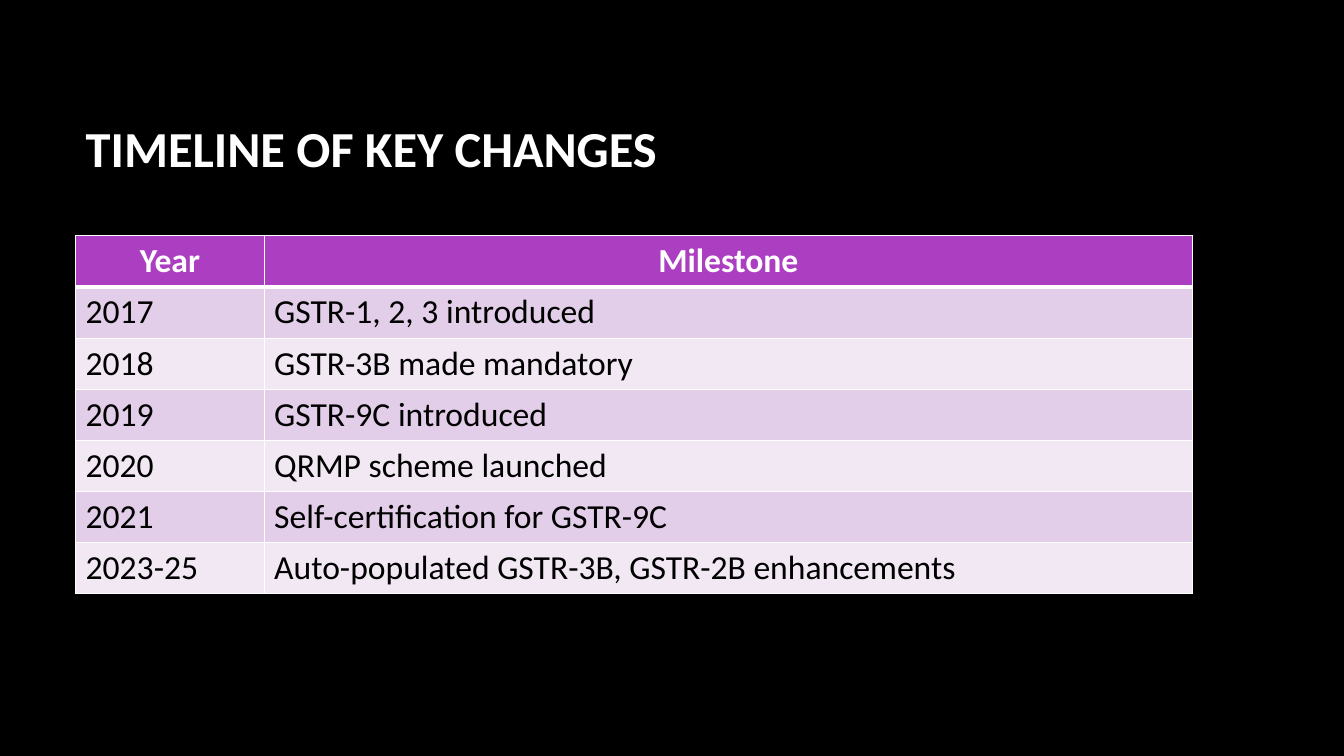
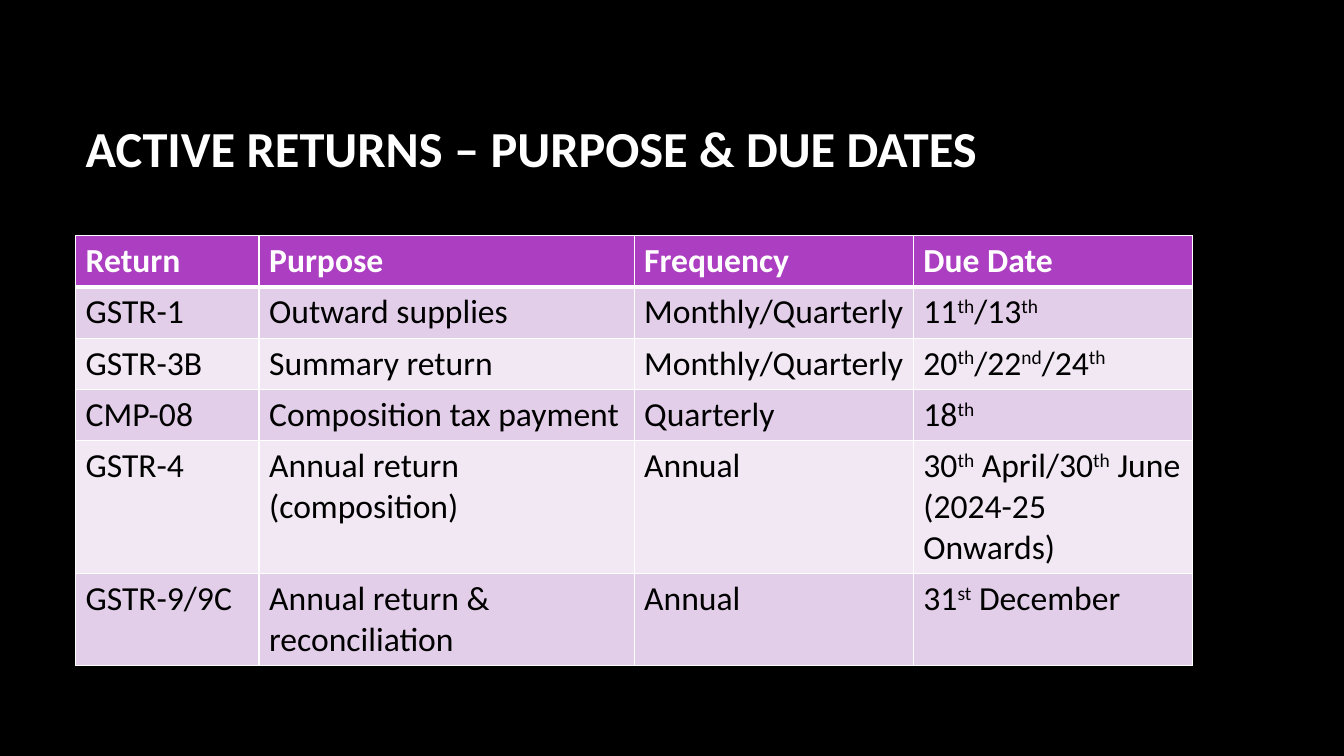
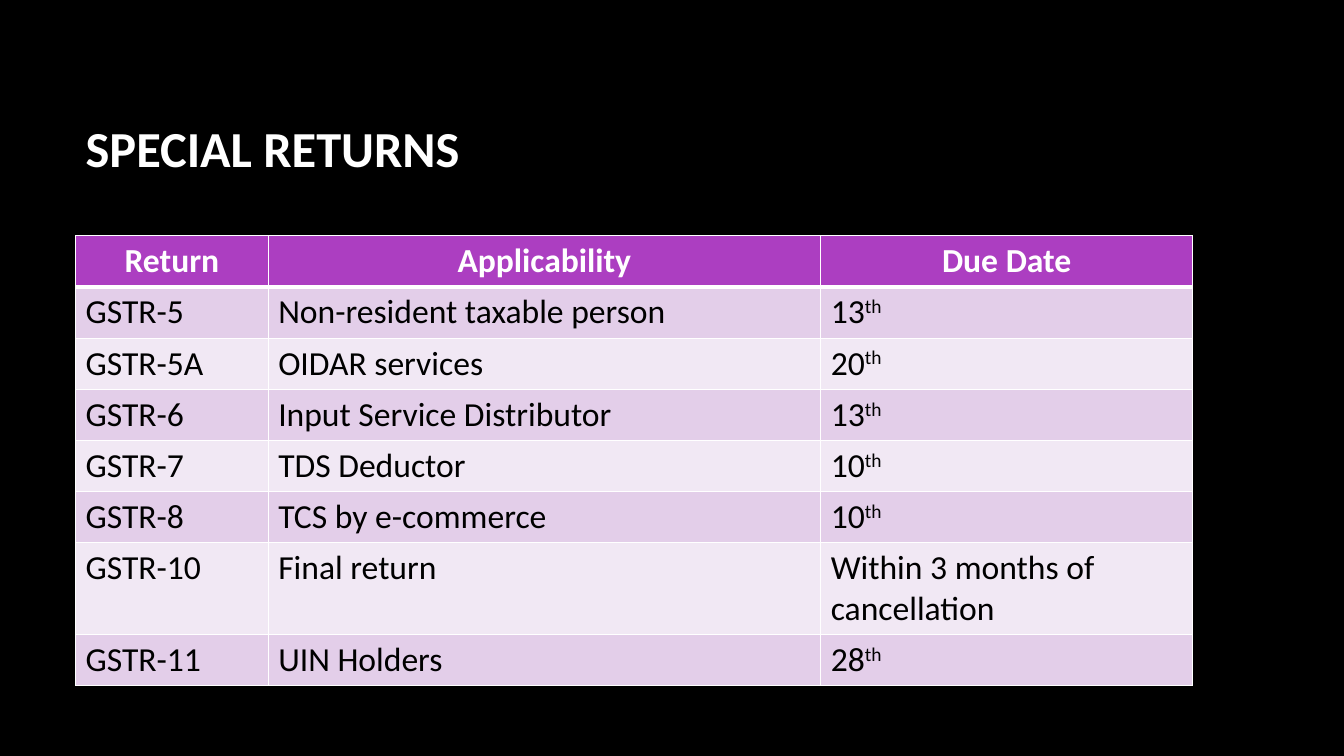
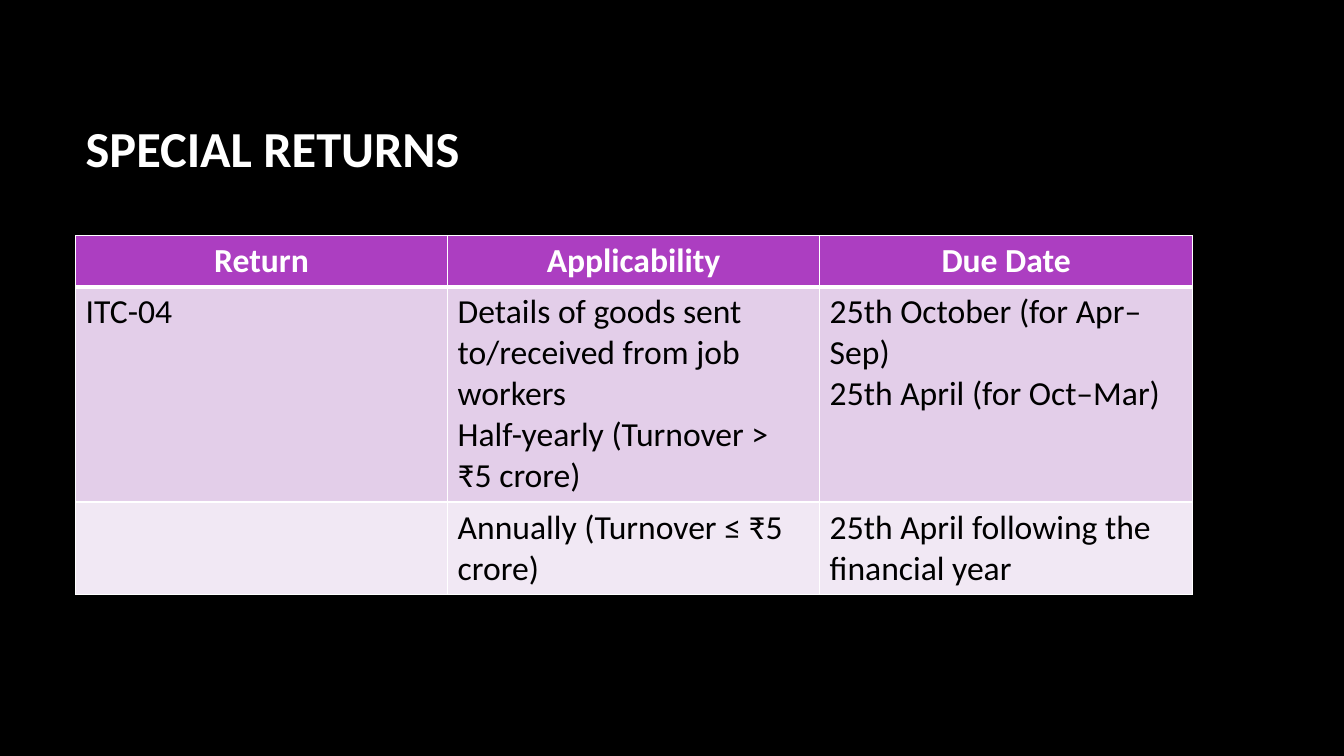
from dataclasses import dataclass

import pptx
import pptx.dml.color
import pptx.enum.text
import pptx.oxml
import pptx.oxml.ns
import pptx.util

Inches = pptx.util.Inches
Pt = pptx.util.Pt
ALIGN = pptx.enum.text.PP_ALIGN

# Content. A cell is a string, a tuple alternating plain and raised text,
# or a list of paragraphs. The last column takes the width left over.
PAGES = [
    {
        "title": "TIMELINE OF KEY CHANGES",
        "leading_widths": [1.87],
        "header_align": ALIGN.CENTER,
        "rows": [
            ["Year", "Milestone"],
            ["2017", "GSTR-1, 2, 3 introduced"],
            ["2018", "GSTR-3B made mandatory"],
            ["2019", "GSTR-9C introduced"],
            ["2020", "QRMP scheme launched"],
            ["2021", "Self-certification for GSTR-9C"],
            ["2023-25", "Auto-populated GSTR-3B, GSTR-2B enhancements"],
        ],
    },
    {
        "title": "ACTIVE RETURNS – PURPOSE & DUE DATES",
        "leading_widths": [1.82, 3.72, 2.77],
        "header_align": ALIGN.LEFT,
        "rows": [
            ["Return", "Purpose", "Frequency", "Due Date"],
            ["GSTR-1", "Outward supplies", "Monthly/Quarterly", ("11", "th", "/13", "th")],
            ["GSTR-3B", "Summary return", "Monthly/Quarterly",
             ("20", "th", "/22", "nd", "/24", "th")],
            ["CMP-08", "Composition tax payment", "Quarterly", ("18", "th")],
            ["GSTR-4", "Annual return (composition)", "Annual",
             ("30", "th", " April/30", "th", " June (2024-25 Onwards)")],
            ["GSTR-9/9C", "Annual return & reconciliation", "Annual",
             ("31", "st", " December")],
        ],
    },
    {
        "title": "SPECIAL RETURNS",
        "leading_widths": [1.91, 5.48],
        "header_align": ALIGN.CENTER,
        "rows": [
            ["Return", "Applicability", "Due Date"],
            ["GSTR-5", "Non-resident taxable person", ("13", "th")],
            ["GSTR-5A", "OIDAR services", ("20", "th")],
            ["GSTR-6", "Input Service Distributor", ("13", "th")],
            ["GSTR-7", "TDS Deductor", ("10", "th")],
            ["GSTR-8", "TCS by e-commerce", ("10", "th")],
            ["GSTR-10", "Final return", "Within 3 months of cancellation"],
            ["GSTR-11", "UIN Holders", ("28", "th")],
        ],
    },
    {
        "title": "SPECIAL RETURNS",
        "leading_widths": [3.69, 3.69],
        "header_align": ALIGN.CENTER,
        "rows": [
            ["Return", "Applicability", "Due Date"],
            ["ITC-04",
             ["Details of goods sent to/received from job workers",
              "Half-yearly (Turnover > ₹5 crore)"],
             ["25th October (for Apr–Sep)", "25th April (for Oct–Mar)"]],
            ["", "Annually (Turnover ≤ ₹5 crore)",
             "25th April following the financial year"],
        ],
    },
]


@dataclass(frozen=True)
class Theme:
    font: str = "Calibri"
    title_size: int = 36
    cell_size: int = 24
    background: str = "000000"
    light_text: str = "FFFFFF"
    dark_text: str = "000000"
    header_fill: str = "AC3EC1"
    band_fills: tuple = ("E3CEE9", "F1E8F4")
    border: str = "FFFFFF"
    thin: int = 1
    thick: int = 3


THEME = Theme()
LEFT, WIDTH = 0.75, 11.08
TITLE_TOP, TITLE_HEIGHT = 0.67, 1.59
TABLE_TOP, ROW_HEIGHT = 2.34, 0.5


def rgb(color):
    return pptx.dml.color.RGBColor.from_string(color)


def add_span(para, text, size, color, bold, raised=False):
    span = para.add_run()
    span.text = text
    font = span.font
    font.name, font.size, font.bold = THEME.font, Pt(size), bold
    font.color.rgb = rgb(color)
    if raised:
        span._r.get_or_add_rPr().set("baseline", "30000")


def set_borders(cell, top, bottom):
    properties = cell._tc.get_or_add_tcPr()
    widths = {"lnL": THEME.thin, "lnR": THEME.thin, "lnT": top, "lnB": bottom}
    for side, width in widths.items():
        properties.append(pptx.oxml.parse_xml(
            f'<a:{side} {pptx.oxml.ns.nsdecls("a")} w="{Pt(width)}">'
            f'<a:solidFill><a:srgbClr val="{THEME.border}"/></a:solidFill></a:{side}>'))


def fill_cell(cell, content, row_index, header_align):
    header = row_index == 0
    set_borders(cell,
                top=THEME.thick if row_index == 1 else THEME.thin,
                bottom=THEME.thick if header else THEME.thin)
    cell.fill.solid()
    cell.fill.fore_color.rgb = rgb(
        THEME.header_fill if header else THEME.band_fills[(row_index - 1) % 2])
    if not content:
        return
    frame = cell.text_frame
    lines = content if isinstance(content, list) else [content]
    for number, line in enumerate(lines):
        para = frame.add_paragraph() if number else frame.paragraphs[0]
        para.alignment = header_align if header else ALIGN.LEFT
        parts = line if isinstance(line, tuple) else (line,)
        for position, text in enumerate(parts):
            add_span(para, text, THEME.cell_size,
                     THEME.light_text if header else THEME.dark_text,
                     bold=header, raised=position % 2 == 1)


def add_grid(page, rows, leading_widths, header_align):
    widths = leading_widths + [WIDTH - sum(leading_widths)]
    table = page.shapes.add_table(
        len(rows), len(widths), Inches(LEFT), Inches(TABLE_TOP),
        Inches(WIDTH), Inches(ROW_HEIGHT * len(rows))).table
    for column, width in zip(table.columns, widths):
        column.width = Inches(width)
    for row_index, row in enumerate(rows):
        for column_index, content in enumerate(row):
            fill_cell(table.cell(row_index, column_index), content, row_index, header_align)


def prepare_layout(deck):
    """Set the shared background and title place."""
    fill = deck.slide_master.background.fill
    fill.solid()
    fill.fore_color.rgb = rgb(THEME.background)
    layout = deck.slide_layouts.get_by_name("Title Only")
    title = layout.placeholders[0]
    title.left, title.top = Inches(LEFT), Inches(TITLE_TOP)
    title.width, title.height = Inches(WIDTH), Inches(TITLE_HEIGHT)
    title.text_frame.vertical_anchor = pptx.enum.text.MSO_ANCHOR.MIDDLE
    title.text_frame.auto_size = pptx.enum.text.MSO_AUTO_SIZE.NONE
    return layout


def add_page(deck, layout, content):
    page = deck.slides.add_slide(layout)
    para = page.shapes.title.text_frame.paragraphs[0]
    para.alignment = ALIGN.LEFT
    add_span(para, content["title"], THEME.title_size, THEME.light_text, bold=True)
    add_grid(page, content["rows"], content["leading_widths"], content["header_align"])


def main():
    deck = pptx.Presentation()
    deck.slide_width, deck.slide_height = Inches(13.33), Inches(7.5)
    layout = prepare_layout(deck)
    for content in PAGES:
        add_page(deck, layout, content)
    deck.save("out.pptx")


if __name__ == "__main__":
    main()
